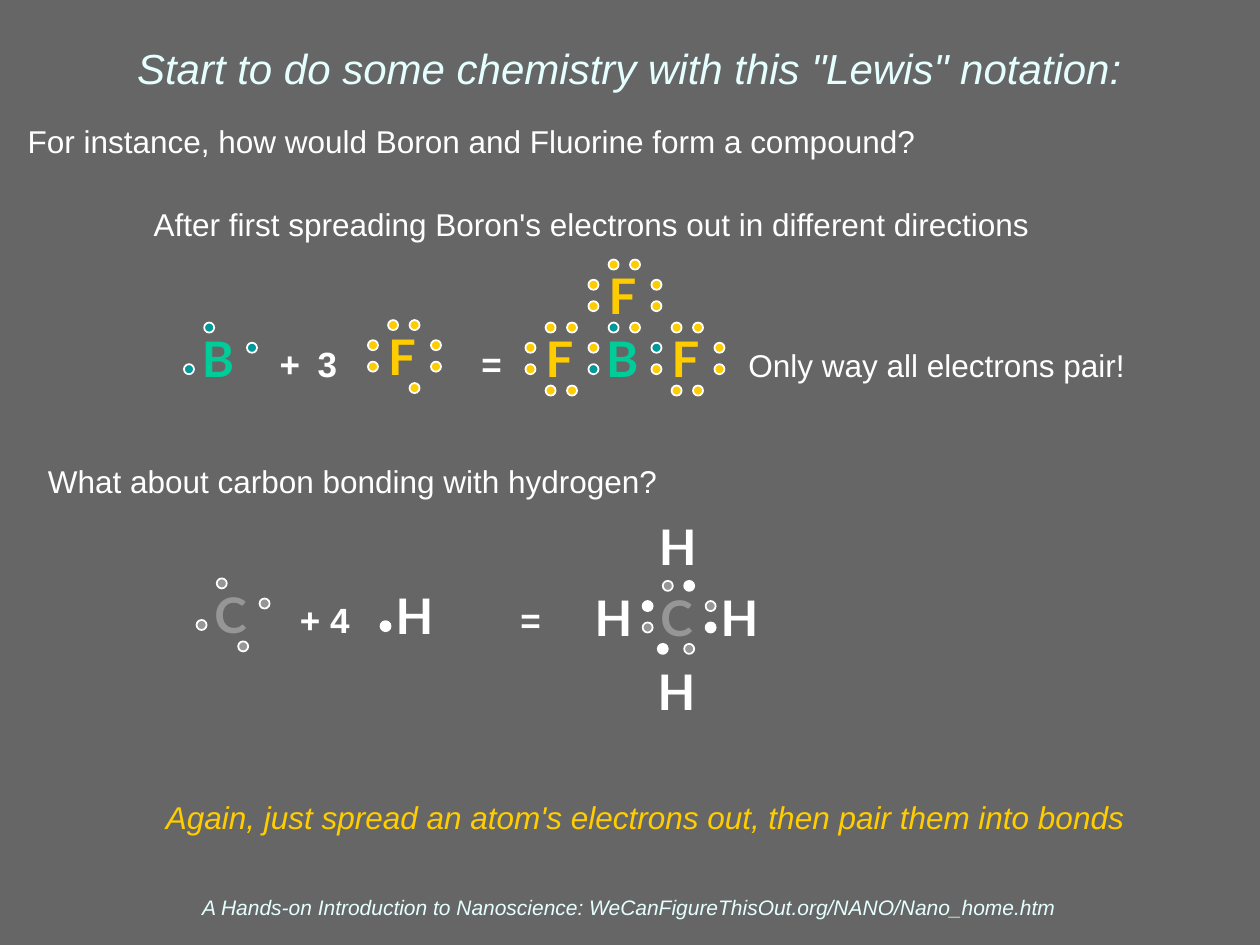
"""Build a slide on forming compounds with Lewis electron-dot notation."""
from dataclasses import dataclass

from lxml.etree import SubElement
from pptx import Presentation
from pptx.dml.color import RGBColor
from pptx.enum.shapes import MSO_SHAPE as Shape
from pptx.enum.text import MSO_ANCHOR as Anchor, PP_ALIGN as Align
from pptx.oxml.ns import qn
from pptx.util import Inches, Pt

GRAY = RGBColor(0x66, 0x66, 0x66)
WHITE = RGBColor(0xFF, 0xFF, 0xFF)
PALE = RGBColor(0xE5, 0xFF, 0xFF)
GOLD = RGBColor(0xFF, 0xCD, 0x00)
YELLOW = RGBColor(0xFF, 0xCC, 0x00)
GREEN = RGBColor(0x00, 0xCC, 0x99)
TEAL = RGBColor(0x00, 0x99, 0x99)
SILVER = RGBColor(0x96, 0x96, 0x96)

BODY = {"name": "Arial", "size": Pt(18), "bold": False, "italic": False, "color": WHITE}
OPERATOR = BODY | {"size": Pt(20), "bold": True}
TITLE = BODY | {"size": Pt(24), "italic": True, "color": PALE}
FOOTER = TITLE | {"size": Pt(12)}
CONCLUSION = BODY | {"italic": True, "color": GOLD}
SYMBOL = BODY | {"name": "Lato", "size": Pt(28), "bold": True}

LETTER_WIDTH, LETTER_HEIGHT, DOT_SIZE = 0.46, 0.57, 0.08
SLOTS = {
    "TL": (0.12, 0), "TR": (0.29, 0),
    "RU": (0.46, 0.16), "RL": (0.46, 0.33),
    "BL": (0.12, 0.5), "BR": (0.29, 0.5),
    "LU": (-0.04, 0.16), "LL": (-0.04, 0.33),
    "BC": (0.08, 0.5),
}


@dataclass
class Line:
    runs: list[tuple[str, dict]]
    space_before: float = 0
    tabs: tuple[float, ...] = ()
    align: Align = Align.LEFT


@dataclass
class Atom:
    symbol: str
    left: float
    top: float
    color: RGBColor
    dot_color: RGBColor
    slots: str = ""
    partner_slots: str = ""


def fluorine(left: float, top: float, slots: str) -> Atom:
    return Atom("F", left, top, YELLOW, YELLOW, slots)


def boron(left: float, top: float) -> Atom:
    return Atom("B", left, top, GREEN, TEAL, "RU LL TL")


def carbon(left: float, top: float, partner_slots: str = "") -> Atom:
    return Atom("C", left, top, SILVER, SILVER, "RU LL BR TL", partner_slots)


def hydrogen(left: float, top: float, slots: str = "") -> Atom:
    return Atom("H", left, top, WHITE, WHITE, slots)


MOLECULES = [
    [hydrogen(3.06, 4.6, "LL")],
    [boron(1.5, 2.56)],
    [fluorine(2.96, 2.54, "BR RL TL RU LU LL TR")],
    [
        boron(4.71, 2.56),
        fluorine(5.21, 2.56, "BR RL TL RU LL BL TR"),
        fluorine(4.71, 2.06, "BR RL TL RU LU LL TR"),
        fluorine(4.21, 2.56, "BR BL TL RU LU LL TR"),
    ],
    [carbon(1.6, 4.59)],
    [
        hydrogen(5.64, 4.61),
        hydrogen(4.64, 4.61),
        hydrogen(5.15, 4.05),
        hydrogen(5.14, 5.2),
        carbon(5.14, 4.61, "RL LU BC TR"),
    ],
]


def add_text(shapes, left: float, top: float, width: float, height: float,
             lines: list[Line], anchor: Anchor = Anchor.TOP) -> None:
    box = shapes.add_textbox(Inches(left), Inches(top), Inches(width), Inches(height))
    frame = box.text_frame
    frame_format = {"word_wrap": True, "vertical_anchor": anchor}
    frame_format |= {f"margin_{side}": Inches(0.05) for side in ("left", "top", "right", "bottom")}
    for name, value in frame_format.items():
        setattr(frame, name, value)
    for index, line in enumerate(lines):
        paragraph = frame.add_paragraph() if index else frame.paragraphs[0]
        paragraph.alignment = line.align
        paragraph.space_before = Pt(line.space_before)
        if line.tabs:
            tab_list = SubElement(paragraph._p.get_or_add_pPr(), qn("a:tabLst"))
            for position in line.tabs:
                SubElement(tab_list, qn("a:tab"), pos=str(Inches(position)), algn="l")
        for text, style in line.runs:
            run = paragraph.add_run()
            run.text = text
            for name, value in style.items():
                if name == "color":
                    run.font.color.rgb = value
                else:
                    setattr(run.font, name, value)


def add_electrons(shapes, atom: Atom, slots: str, color: RGBColor) -> None:
    for slot in slots.split():
        across, down = SLOTS[slot]
        dot = shapes.add_shape(Shape.OVAL, Inches(atom.left + across), Inches(atom.top + down),
                               Inches(DOT_SIZE), Inches(DOT_SIZE))
        dot.shadow.inherit = False
        dot.fill.solid()
        dot.fill.fore_color.rgb = color
        dot.line.color.rgb = WHITE
        dot.line.width = Pt(1)


def add_atom(shapes, atom: Atom) -> None:
    letter = Line([(atom.symbol, SYMBOL | {"color": atom.color})], align=Align.CENTER)
    add_text(shapes, atom.left, atom.top, LETTER_WIDTH, LETTER_HEIGHT, [letter])
    add_electrons(shapes, atom, atom.slots, atom.dot_color)
    add_electrons(shapes, atom, atom.partner_slots, WHITE)


def main() -> None:
    presentation = Presentation()
    presentation.slide_width, presentation.slide_height = Inches(10), Inches(7.5)
    slide = presentation.slides.add_slide(presentation.slide_layouts[6])
    slide.background.fill.solid()
    slide.background.fill.fore_color.rgb = GRAY

    add_text(slide.shapes, 0.33, 7.06, 9.33, 0.29, [
        Line([("A Hands-on Introduction to Nanoscience: "
               "WeCanFigureThisOut.org/NANO/Nano_home.htm", FOOTER)], align=Align.CENTER),
    ], Anchor.BOTTOM)
    add_text(slide.shapes, 0.33, 3.62, 9.58, 2.94, [
        Line([("What about carbon bonding with hydrogen?", BODY)]),
        Line([("\t+ 4\t=", OPERATOR)], 56.5, (2, 3.75)),
        Line([("Again, just spread an atom's electrons out, then pair them into bonds",
               CONCLUSION)], 90, align=Align.CENTER),
    ])
    add_text(slide.shapes, 0.33, 0.08, 9.33, 0.92, [
        Line([('Start to do some chemistry with this "Lewis" notation:', TITLE)],
             align=Align.CENTER),
    ], Anchor.MIDDLE)
    add_text(slide.shapes, 0.17, 0.92, 9.58, 2.34, [
        Line([("For instance, how would Boron and Fluorine form a compound?", BODY)]),
        Line([("\tAfter first spreading Boron's electrons out in different directions", BODY)],
             25.5, (1,)),
        Line([("\t+\t3\t=", OPERATOR), ("\tOnly way all electrons pair!", BODY)],
             57, (2, 2.3, 3.6, 5.72)),
    ])
    for molecule in MOLECULES:
        group = slide.shapes.add_group_shape()
        for atom in molecule:
            add_atom(group.shapes, atom)
    presentation.save("out.pptx")


if __name__ == "__main__":
    main()
